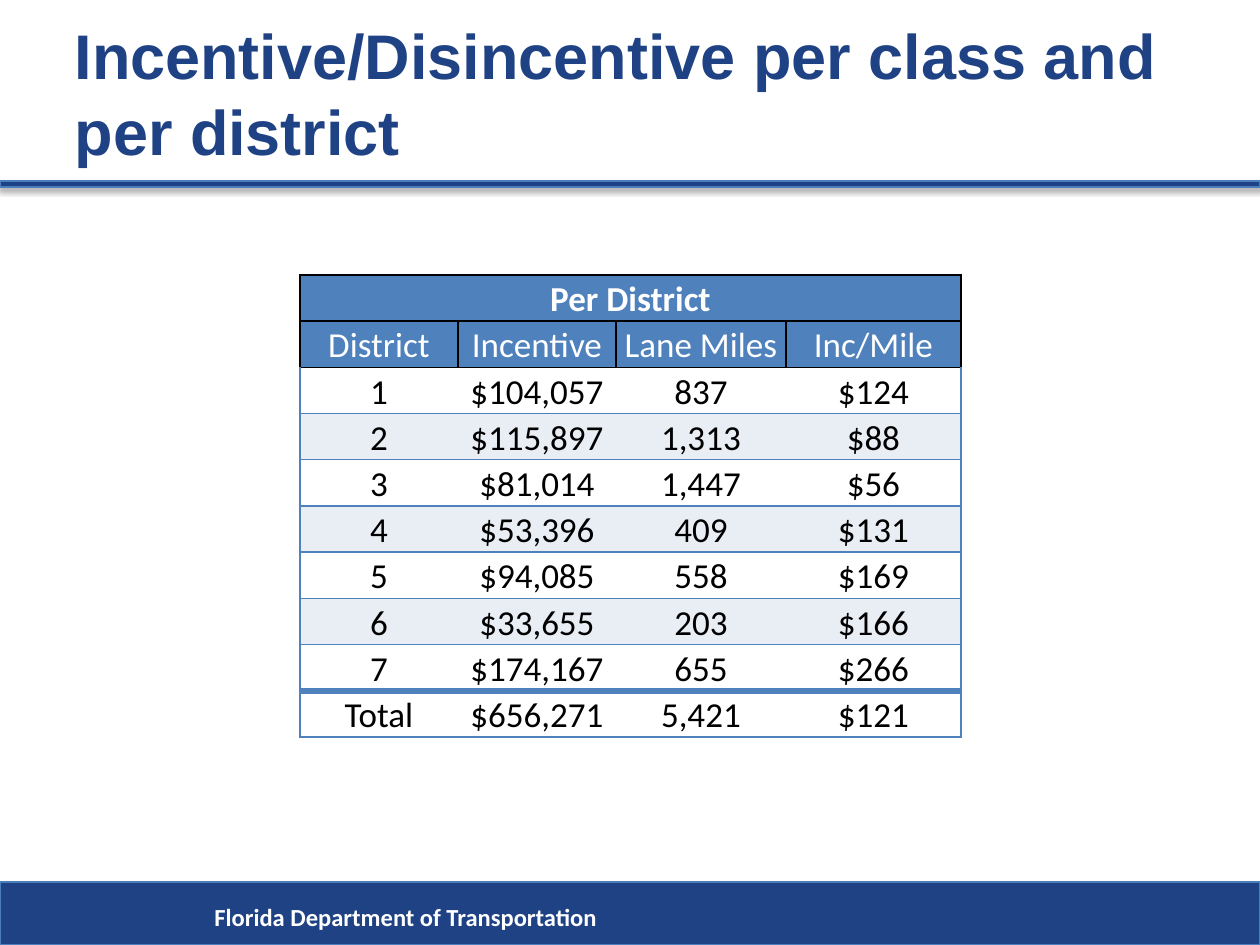
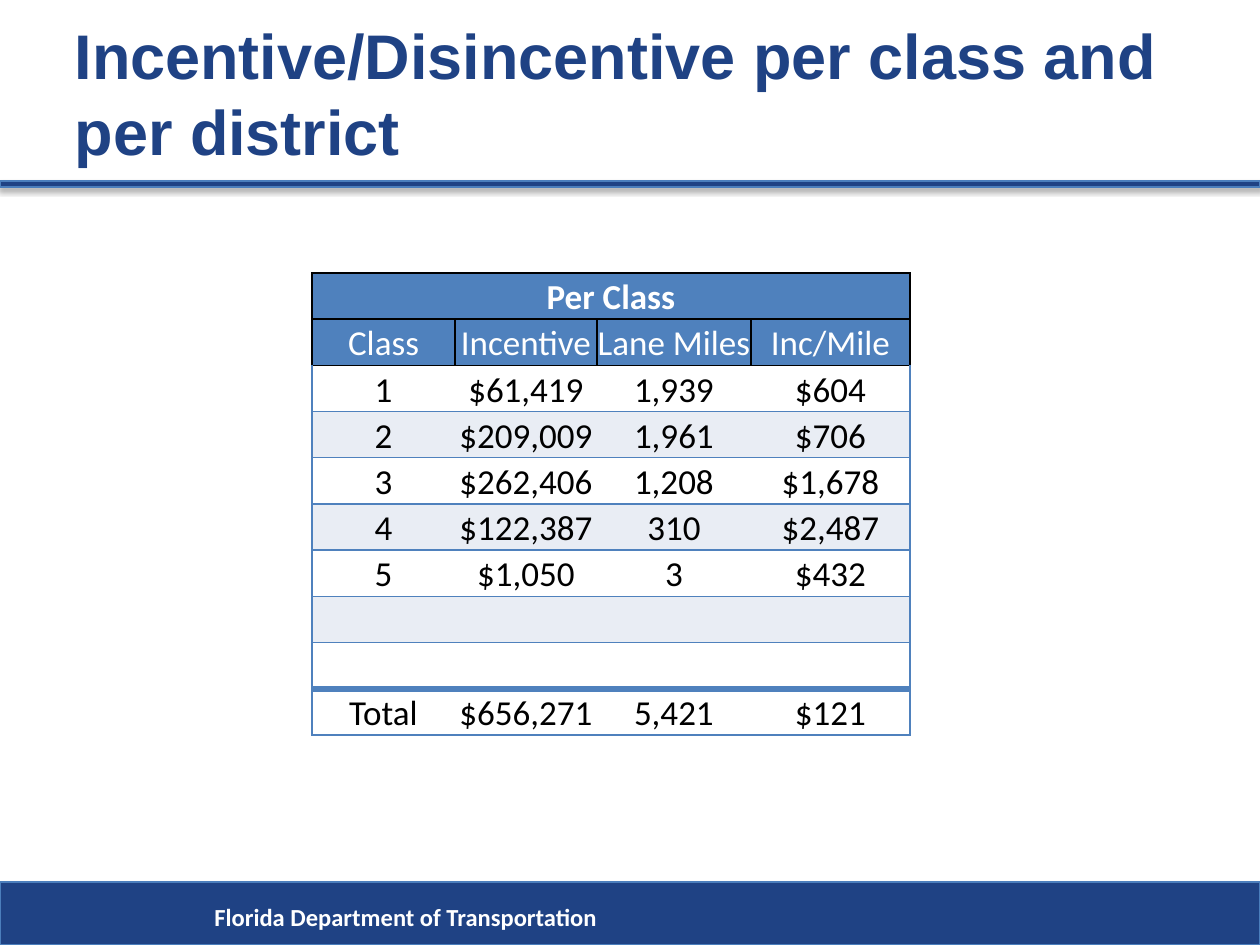
import lxml.etree
import pptx
import pptx.dml.color
import pptx.enum.shapes
import pptx.enum.text
import pptx.oxml.ns
import pptx.util

RGBColor = pptx.dml.color.RGBColor
Anchor = pptx.enum.text.MSO_ANCHOR
Align = pptx.enum.text.PP_ALIGN
qn = pptx.oxml.ns.qn

# Shared colours and fonts
NAVY = RGBColor(0x1F, 0x42, 0x84)
EDGE = RGBColor(0x4B, 0x7E, 0xBC)
BLUE = RGBColor(0x4F, 0x81, 0xBD)
PALE = RGBColor(0xE9, 0xED, 0xF4)
WHITE = RGBColor(0xFF, 0xFF, 0xFF)
BLACK = RGBColor(0x00, 0x00, 0x00)
TITLE_FONT = "Arial"
BODY_FONT = "Calibri"

# Shared places: left, top, width, height in px
PX_PER_INCH = 126
PAGE_SIZE = (1260, 945)
TITLE_BOX = (62, 14, 1134, 157)
RULE_BOX = (0, 181, 1260, 6)
FOOTER_BOX = (0, 882, 1260, 63)
FOOTER_INDENT, FOOTER_DROP = 202, 14
TITLE = "Incentive/Disincentive per class and per district"
FOOTER = "Florida Department of Transportation"
HEADER_ROWS = 2

TABLES = [
    {
        "origin": (300, 275), "widths": (158, 158, 170, 175),
        "caption": "Per District",
        "rows": [
            ("District", "Incentive", "Lane Miles", "Inc/Mile"),
            ("1", "$104,057", "837", "$124"),
            ("2", "$115,897", "1,313", "$88"),
            ("3", "$81,014", "1,447", "$56"),
            ("4", "$53,396", "409", "$131"),
            ("5", "$94,085", "558", "$169"),
            ("6", "$33,655", "203", "$166"),
            ("7", "$174,167", "655", "$266"),
            ("Total", "$656,271", "5,421", "$121"),
        ],
    },
    {
        "origin": (312, 273), "widths": (143, 142, 154, 159),
        "caption": "Per Class",
        "rows": [
            ("Class", "Incentive", "Lane Miles", "Inc/Mile"),
            ("1", "$61,419", "1,939", "$604"),
            ("2", "$209,009", "1,961", "$706"),
            ("3", "$262,406", "1,208", "$1,678"),
            ("4", "$122,387", "310", "$2,487"),
            ("5", "$1,050", "3", "$432"),
            ("",) * 4,
            ("",) * 4,
            ("Total", "$656,271", "5,421", "$121"),
        ],
    },
]
TABLE_HEIGHT = 462


def px(length):
    return pptx.util.Emu(round(length * 914400 / PX_PER_INCH))


def write(frame, text, *, size, color, font=BODY_FONT, bold=False,
          align=Align.LEFT, anchor=Anchor.TOP):
    frame.word_wrap = True
    frame.vertical_anchor = anchor
    para = frame.paragraphs[0]
    para.alignment = align
    if text:
        span = para.add_run()
        span.text = text
        span.font.name = font
        span.font.size = pptx.util.Pt(size)
        span.font.bold = bold
        span.font.color.rgb = color


def add_band(page, box):
    band = page.shapes.add_shape(pptx.enum.shapes.MSO_SHAPE.RECTANGLE, *map(px, box))
    band.fill.solid()
    band.fill.fore_color.rgb = NAVY
    band.line.color.rgb = EDGE
    band.line.width = pptx.util.Pt(0.75)
    # Soft shadow straight below
    band.shadow.inherit = False
    effects = band.element.spPr.find(qn("a:effectLst"))
    shadow = lxml.etree.SubElement(
        effects, qn("a:outerShdw"), blurRad=str(pptx.util.Pt(3.1)),
        dist=str(pptx.util.Pt(1.8)), dir="5400000", rotWithShape="0")
    tint = lxml.etree.SubElement(shadow, qn("a:srgbClr"), val=str(BLACK))
    lxml.etree.SubElement(tint, qn("a:alpha"), val="35000")


def add_title(page, box):
    title = page.shapes.title
    title.left, title.top, title.width, title.height = map(px, box)
    title.text_frame.auto_size = pptx.enum.text.MSO_AUTO_SIZE.NONE
    write(title.text_frame, TITLE, size=36, color=NAVY, font=TITLE_FONT,
          bold=True, anchor=Anchor.MIDDLE)


def add_footer(page, box):
    add_band(page, box)
    left, top, width, height = box
    label = page.shapes.add_textbox(px(left + FOOTER_INDENT), px(top + FOOTER_DROP),
                                    px(width - FOOTER_INDENT - 53), px(43))
    write(label.text_frame, FOOTER, size=14, color=WHITE, bold=True)


def set_border(cell, side, color, points):
    """Draw one cell edge, or hide it when color is None."""
    line = lxml.etree.SubElement(cell._tc.get_or_add_tcPr(), qn("a:ln" + side),
                                 w=str(pptx.util.Pt(points)))
    if color is None:
        lxml.etree.SubElement(line, qn("a:noFill"))
    else:
        fill = lxml.etree.SubElement(line, qn("a:solidFill"))
        lxml.etree.SubElement(fill, qn("a:srgbClr"), val=str(color))


def style_cell(cell, row, column, last_row, last_column):
    def level(edge):
        """Colour and weight of the horizontal line above row number edge."""
        return (BLACK if edge <= HEADER_ROWS else BLUE), (4 if edge == last_row else 1)

    header = row < HEADER_ROWS
    inner = BLACK if header else None
    outer = BLACK if header else BLUE
    set_border(cell, "L", outer if column == 0 else inner, 1)
    set_border(cell, "R", outer if column == last_column else inner, 1)
    set_border(cell, "T", *level(row))
    set_border(cell, "B", *level(row + 1))

    # Body rows alternate; the total row stays white
    banded = row % 2 == 1 and row != last_row
    cell.fill.solid()
    cell.fill.fore_color.rgb = BLUE if header else PALE if banded else WHITE
    cell.margin_left = cell.margin_right = cell.margin_top = cell.margin_bottom = 0
    cell.vertical_anchor = Anchor.BOTTOM


def add_incentive_table(page, origin, widths, caption, rows):
    rows = [(caption,) + ("",) * (len(widths) - 1)] + rows
    box = (*origin, sum(widths), TABLE_HEIGHT)
    table = page.shapes.add_table(len(rows), len(widths), *map(px, box)).table
    table.first_row = table.horz_banding = False
    for column, width in zip(table.columns, widths):
        column.width = px(width)
    for row, values in enumerate(rows):
        for column, value in enumerate(values):
            cell = table.cell(row, column)
            style_cell(cell, row, column, len(rows) - 1, len(widths) - 1)
            write(cell.text_frame, value, size=20, bold=row == 0, align=Align.CENTER,
                  color=WHITE if row < HEADER_ROWS else BLACK, anchor=Anchor.BOTTOM)
    table.cell(0, 0).merge(table.cell(0, len(widths) - 1))


def add_table_page(deck, content):
    page = deck.slides.add_slide(deck.slide_layouts.get_by_name("Title Only"))
    add_band(page, RULE_BOX)
    add_footer(page, FOOTER_BOX)
    add_title(page, TITLE_BOX)
    add_incentive_table(page, **content)


def main():
    deck = pptx.Presentation()
    deck.slide_width, deck.slide_height = map(px, PAGE_SIZE)
    for content in TABLES:
        add_table_page(deck, content)
    deck.save("out.pptx")


if __name__ == "__main__":
    main()
